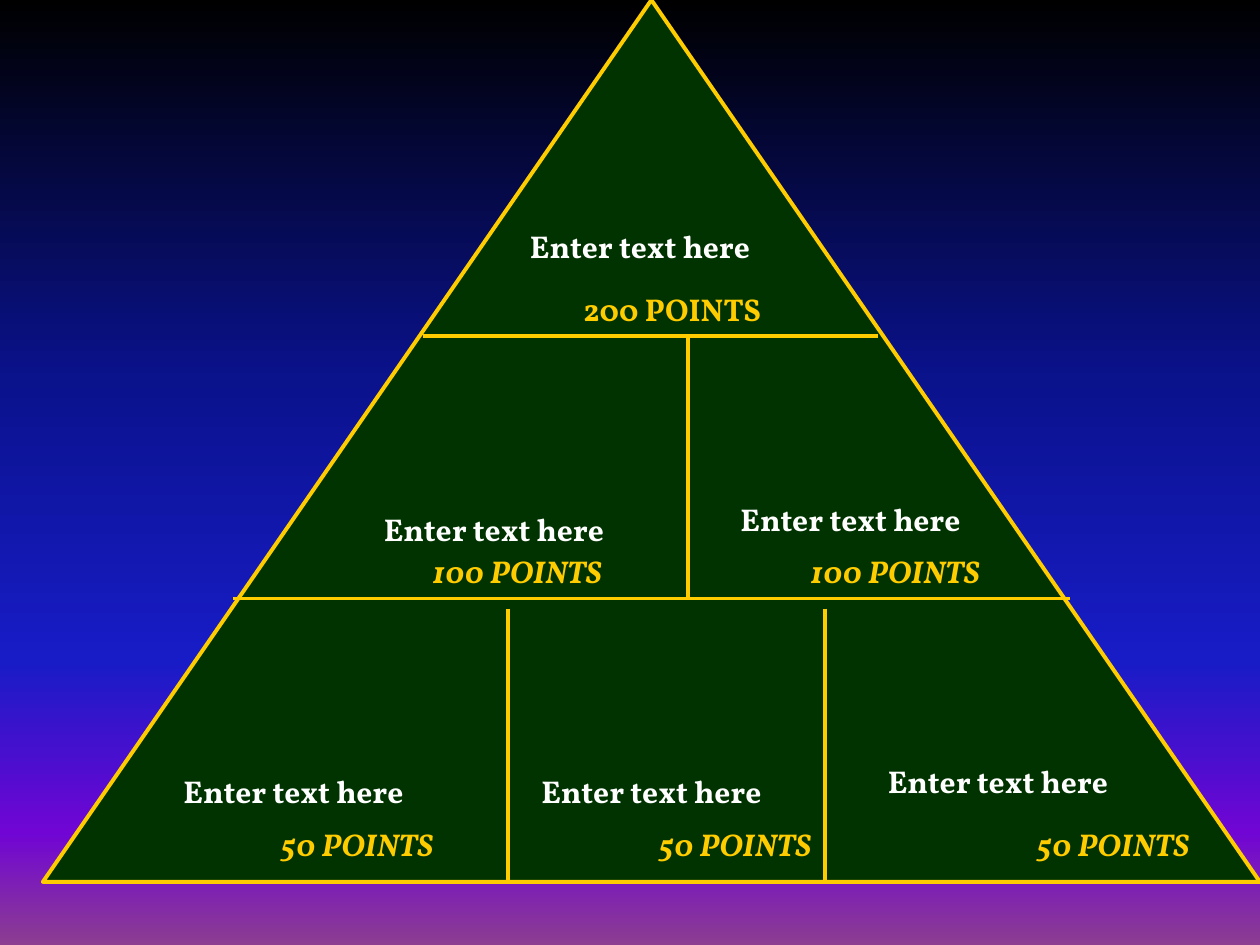
from lxml import etree
from pptx import Presentation
from pptx.dml.color import RGBColor
from pptx.enum.shapes import MSO_CONNECTOR, MSO_SHAPE
from pptx.enum.text import MSO_AUTO_SIZE, PP_ALIGN
from pptx.oxml import parse_xml
from pptx.oxml.ns import nsdecls, qn
from pptx.util import Inches, Pt

STRAIGHT = MSO_CONNECTOR.STRAIGHT
TRIANGLE = MSO_SHAPE.ISOSCELES_TRIANGLE
GROW = MSO_AUTO_SIZE.SHAPE_TO_FIT_TEXT
LEFT, CENTER = PP_ALIGN.LEFT, PP_ALIGN.CENTER
GREEN = RGBColor(0x00, 0x33, 0x00)
GOLD = RGBColor(0xFF, 0xCC, 0x00)
WHITE = RGBColor(0xFF, 0xFF, 0xFF)

FONT = {"name": "Vollkorn", "size": Pt(18), "bold": True}
LINE_WIDTH = Pt(2.25)
BACKGROUND_STOPS = [
    (0, RGBColor(0x00, 0x00, 0x00)),
    (40, RGBColor(0x0A, 0x12, 0x8C)),
    (70, RGBColor(0x18, 0x1C, 0xC7)),
    (88, RGBColor(0x70, 0x05, 0xD4)),
    (100, RGBColor(0x8C, 0x3D, 0x91)),
]
PYRAMID = (0.34, 0, 9.66, 7)
UPPER, LOWER, LOWER_TOP, BASE = 2.67, 4.75, 4.83, 7
DIVIDERS = [
    (1.85, LOWER, 8.49, LOWER),
    (3.36, UPPER, 6.97, UPPER),
    (4.03, LOWER_TOP, 4.03, BASE),
    (6.55, LOWER_TOP, 6.55, BASE),
    (5.46, UPPER, 5.46, LOWER),
]
POINTS_HEIGHT, COLUMN_STEP = 0.5, 3
POINT_ROWS = [
    (["50 POINTS"] * 3, 1.51, 6.5, 8.66, 2.23, True),
    (["100 POINTS"] * 2, 3.11, 4.33, 5.63, 3.43, True),
    (["200 POINTS"], 4.11, 2.25, 2.44, 4.63, False),
]
PROMPT = "Enter text here"
PROMPT_SIZE = (3.5, 0.4)
PROMPT_PLACES = [(2.17, 4), (6.17, 6), (3.42, 6.08),
                 (0.58, 6.08), (5, 3.92), (3.33, 1.75)]


def paint_background(slide):
    stops = "".join(
        f'<a:gs pos="{position * 1000}"><a:srgbClr val="{color}"/></a:gs>'
        for position, color in BACKGROUND_STOPS)
    background = parse_xml(
        f'<p:bg {nsdecls("p", "a")}><p:bgPr><a:gradFill rotWithShape="1">'
        f'<a:gsLst>{stops}</a:gsLst><a:lin ang="5400000" scaled="0"/>'
        '</a:gradFill><a:effectLst/></p:bgPr></p:bg>')
    slide.element.cSld.insert(0, background)


def style_line(line):
    line.color.rgb = GOLD
    line.width = LINE_WIDTH


def add_pyramid(slide):
    pyramid = slide.shapes.add_shape(TRIANGLE, *map(Inches, PYRAMID))
    pyramid.shadow.inherit = False
    pyramid.fill.solid()
    pyramid.fill.fore_color.rgb = GREEN
    style_line(pyramid.line)


def add_divider(slide, ends):
    divider = slide.shapes.add_connector(STRAIGHT, *map(Inches, ends))
    style_line(divider.line)
    etree.SubElement(divider.element.spPr, qn("a:effectLst"))


def add_text(slide, text, box, color, alignment, inset=0.1, italic=False, tabs=()):
    frame = slide.shapes.add_textbox(*map(Inches, box)).text_frame
    frame.word_wrap = True
    frame.auto_size = GROW
    frame.margin_left = Inches(inset)
    paragraph = frame.paragraphs[0]
    paragraph.alignment = alignment
    if tabs:
        tab_list = etree.SubElement(paragraph._p.get_or_add_pPr(), qn("a:tabLst"))
        for position in tabs:
            etree.SubElement(tab_list, qn("a:tab"),
                             pos=str(Inches(position)), algn="l")
    run = paragraph.add_run()
    run.text = text
    for name, value in {**FONT, "italic": italic}.items():
        setattr(run.font, name, value)
    run.font.color.rgb = color


def main():
    presentation = Presentation()
    presentation.slide_width = Inches(10)
    presentation.slide_height = Inches(7.5)
    slide = presentation.slides.add_slide(presentation.slide_layouts[6])
    paint_background(slide)
    add_pyramid(slide)
    for ends in DIVIDERS:
        add_divider(slide, ends)
    for labels, left, top, width, start, italic in POINT_ROWS:
        tabs = [COLUMN_STEP * column for column in range(1, len(labels))]
        add_text(slide, "\t".join(labels), (left, top, width, POINTS_HEIGHT),
                 GOLD, LEFT, start - left, italic, tabs)
    for place in PROMPT_PLACES:
        add_text(slide, PROMPT, place + PROMPT_SIZE, WHITE, CENTER)
    presentation.save("out.pptx")


if __name__ == "__main__":
    main()
